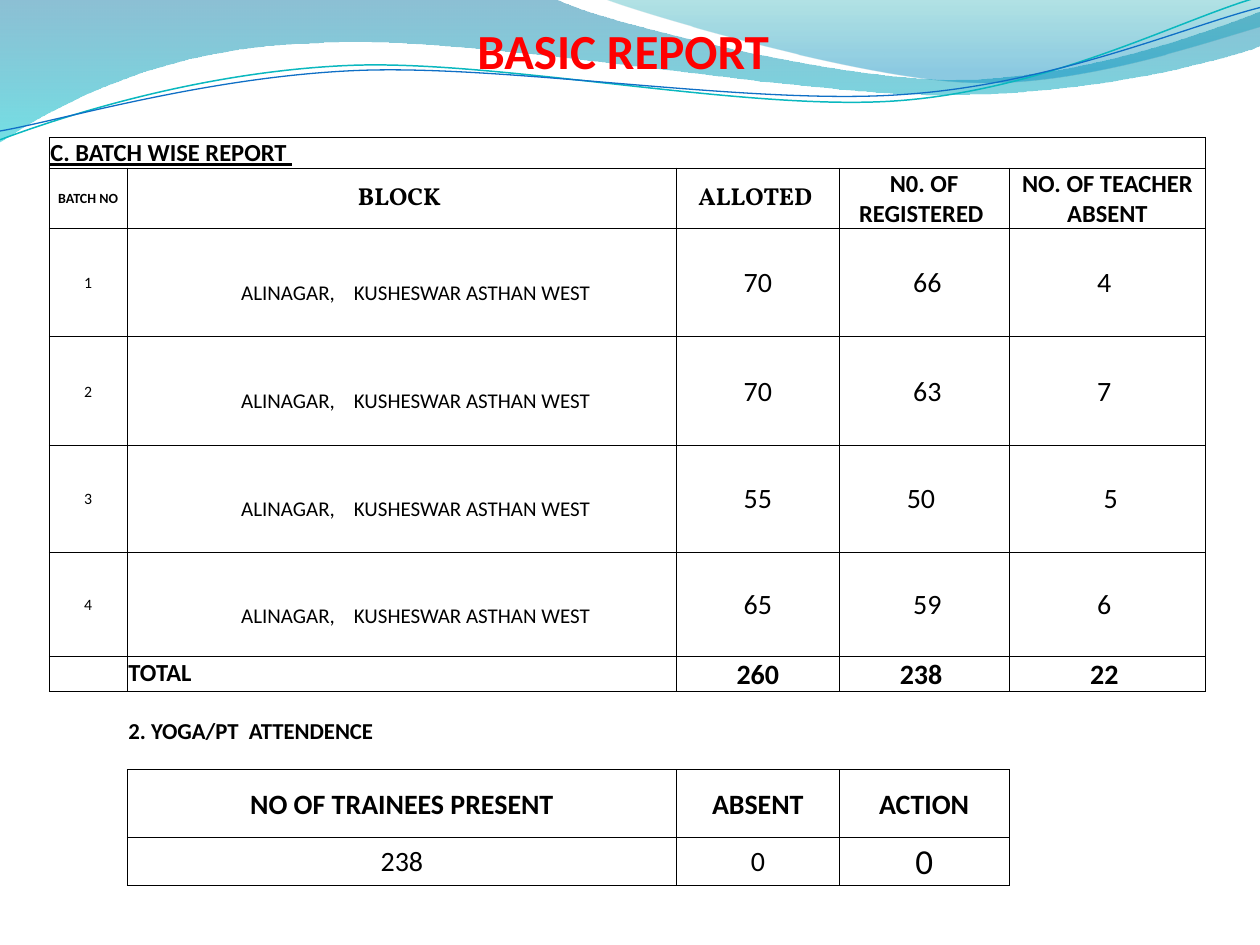
from lxml import etree
from pptx import Presentation
from pptx.dml.color import RGBColor
from pptx.enum.text import MSO_ANCHOR, PP_ALIGN
from pptx.oxml import parse_xml
from pptx.oxml.ns import qn
from pptx.util import Inches, Pt

LEFT, CENTER = PP_ALIGN.LEFT, PP_ALIGN.CENTER
TOP, MIDDLE, BOTTOM = MSO_ANCHOR.TOP, MSO_ANCHOR.MIDDLE, MSO_ANCHOR.BOTTOM
NS = 'xmlns:a="http://schemas.openxmlformats.org/drawingml/2006/main"'
FONT, SERIF = "Calibri", "Vollkorn"


def color(hex_code):
    return RGBColor.from_string(hex_code)


def wave(shapes, segments, closed):
    """Freeform from points (2 numbers) and Bezier curves (6 numbers)."""
    points = [(Inches(seg[i]), Inches(seg[i + 1]))
              for seg in segments for i in range(0, len(seg), 2)]
    fb = shapes.build_freeform(*points[0])
    fb.add_line_segments(points[1:], close=closed)
    shape = fb.convert_to_shape()
    shape.shadow.inherit = False
    # Each curve's three line segments become one cubic Bezier
    lines = iter(list(shape.element.iter(qn("a:lnTo"))))
    for seg in segments[1:]:
        line = next(lines)
        if len(seg) == 6:
            line.tag = qn("a:cubicBezTo")
            for _ in range(2):
                extra = next(lines)
                line.append(extra[0])
                extra.getparent().remove(extra)
    return shape


prs = Presentation()
prs.slide_width, prs.slide_height = Inches(10), Inches(7.5)
s = prs.slides.add_slide(prs.slide_layouts[6])

# Filled waves: outline, then gradient stops (position, colour, opacity)
bands = [
    ([(0, 0), (4.4, -0.01), (4.76, 0.17, 6.64, 0.63, 7.58, 0.63),
      (8.53, 0.63, 9.58, 0.26, 10, 0.09), (10.01, 0.36),
      (9.83, 0.44, 8.7, 0.76, 7.46, 0.75), (6.22, 0.75, 3.82, 0.28, 2.57, 0.34),
      (1.29, 0.36, 0.46, 0.83, -0.01, 1.13)],
     [(0, "0074A1", 45), (100, "00C6CF", 55)]),
    ([(4.79, -0.01), (5.09, 0.11, 6.82, 0.62, 7.69, 0.65),
      (8.56, 0.69, 9.61, 0.32, 10, 0.21), (10, 0)],
     [(0, "00A1A9", 30), (80, "008BBF", 45)]),
]
for outline, stops in bands:
    sp = wave(s.shapes, outline, True)
    sp.line.fill.background()
    gs = "".join(f'<a:gs pos="{pos * 1000}"><a:srgbClr val="{c}"><a:alpha val="{op * 1000}"/>'
                 f'</a:srgbClr></a:gs>' for pos, c, op in stops)
    sp.element.spPr.find(qn("a:ln")).addprevious(parse_xml(
        f'<a:gradFill {NS} rotWithShape="1"><a:gsLst>{gs}</a:gsLst>'
        '<a:lin ang="5400000" scaled="0"/></a:gradFill>'))

# Thin wave lines
strands = [
    ([(0, 1.11), (0.48, 0.93, 1.58, 0.57, 2.77, 0.52),
      (3.95, 0.47, 5.93, 0.89, 7.13, 0.8), (8.33, 0.71, 9.38, 0.15, 9.98, -0.02)],
     "0AB8BF", 0.85),
    ([(0, 1.04), (0.47, 0.96, 1.64, 0.61, 2.83, 0.56),
      (4.03, 0.51, 5.97, 0.84, 7.17, 0.75), (8.36, 0.67, 9.41, 0.21, 10, 0.06)],
     "0F6FC6", 0.75),
]
for curve, c, width in strands:
    sp = wave(s.shapes, curve, False)
    sp.fill.background()
    sp.line.color.rgb = color(c)
    sp.line.width = Pt(width)

# Title
tf = s.shapes.add_textbox(Inches(0.39), Inches(0.16), Inches(9.11), Inches(0.47)).text_frame
tf.word_wrap = True
tf.vertical_anchor = BOTTOM
tf.margin_left = tf.margin_right = tf.margin_bottom = 0
p = tf.paragraphs[0]
p.alignment = CENTER
r = p.add_run()
r.text = "BASIC REPORT"
r.font.name, r.font.size, r.font.bold = FONT, Pt(28), True
r.font.color.rgb = color("FF0000")

# Table content: (row, column) -> text, size, bold, font, alignment, anchor
content = {
    (0, 0): ("C. BATCH WISE REPORT ", 14, True, FONT, LEFT, BOTTOM),
    (6, 1): ("TOTAL", 14, True, FONT, LEFT, TOP),
    (8, 1): ("2. YOGA/PT  ATTENDENCE", 13, True, FONT, LEFT, MIDDLE),
    (11, 3): ("0", 20, False, FONT, CENTER, MIDDLE),
}
headers = [("BATCH NO", 8, FONT), ("BLOCK ", 14, SERIF), ("ALLOTED ", 14, SERIF),
           ("N0. OF REGISTERED ", 14, FONT), ("NO. OF TEACHER ABSENT", 14, FONT)]
for col, (text, size, font) in enumerate(headers):
    content[1, col] = (text, size, True, font, CENTER, MIDDLE)

batches = [("70", " 66", "4 "), ("70", " 63", "7 "), ("55", "50 ", " 5"), ("65", " 59", "6 ")]
for row, counts in enumerate(batches, 2):
    content[row, 0] = (str(row - 1), 9, False, FONT, CENTER, MIDDLE)
    content[row, 1] = ("ALINAGAR,    KUSHESWAR ASTHAN WEST", 12, False, FONT, CENTER, TOP)
    for col, text in enumerate(counts, 2):
        content[row, col] = (text, 16, False, FONT, CENTER, MIDDLE)

for row, first, bold, texts in [(6, 2, True, ("260", "238 ", "22 ")),
                                (10, 1, True, ("NO OF TRAINEES PRESENT", "ABSENT", "ACTION")),
                                (11, 1, False, ("238", "0"))]:
    for col, text in enumerate(texts, first):
        content[row, col] = (text, 16, bold, FONT, CENTER, MIDDLE)

# Table grid
col_widths = [0.62, 4.36, 1.29, 1.35, 1.56]
row_heights = [0.24, 0.48, 0.86, 0.86, 0.85, 0.83, 0.27, 0.16, 0.3, 0.16, 0.54, 0.38]
table = s.shapes.add_table(len(row_heights), len(col_widths), Inches(0.39), Inches(1.09),
                           Inches(sum(col_widths)), Inches(sum(row_heights))).table
table.first_row = table.horz_banding = False
for column, width in zip(table.columns, col_widths):
    column.width = Inches(width)
for line, height in zip(table.rows, row_heights):
    line.height = Inches(height)
table.cell(0, 0).merge(table.cell(0, 4))
table.cell(8, 1).merge(table.cell(8, 3))

# Ruled cells: the batch table on top, the attendance table below
ruled = {(row, col) for row in range(7) for col in range(5)}
ruled |= {(row, col) for row in (10, 11) for col in (1, 2, 3)}
sides = {"lnL": (0, -1), "lnR": (0, 1), "lnT": (-1, 0), "lnB": (1, 0)}

for row in range(len(row_heights)):
    for col in range(len(col_widths)):
        cell = table.cell(row, col)
        cell.margin_left = cell.margin_right = cell.margin_top = Inches(0.01)
        cell.margin_bottom = 0
        tcPr = cell._tc.get_or_add_tcPr()
        for tag, (dr, dc) in sides.items():
            drawn = (row, col) in ruled or (row + dr, col + dc) in ruled
            paint = ('<a:solidFill><a:srgbClr val="000000"/></a:solidFill>' if drawn
                     else "<a:noFill/>")
            tcPr.append(parse_xml(f'<a:{tag} {NS} w="6350">{paint}</a:{tag}>'))
        if (row, col) in ruled:
            cell.fill.solid()
            cell.fill.fore_color.rgb = color("FFFFFF")
        else:
            cell.fill.background()
        p = cell.text_frame.paragraphs[0]
        if (row, col) not in content:
            etree.SubElement(p._p, qn("a:endParaRPr")).set("sz", "600")
            continue
        text, size, bold, font, align, anchor = content[row, col]
        p.alignment, cell.vertical_anchor = align, anchor
        if col == 1 and 2 <= row <= 5:
            cell.margin_top, cell.margin_left = Inches(0.41), Inches(0.23)
        r = p.add_run()
        r.text = text
        r.font.name, r.font.size, r.font.bold = font, Pt(size), bold
        r.font.underline = (row, col) == (0, 0)
        r.font.color.rgb = color("000000")

prs.save("out.pptx")
